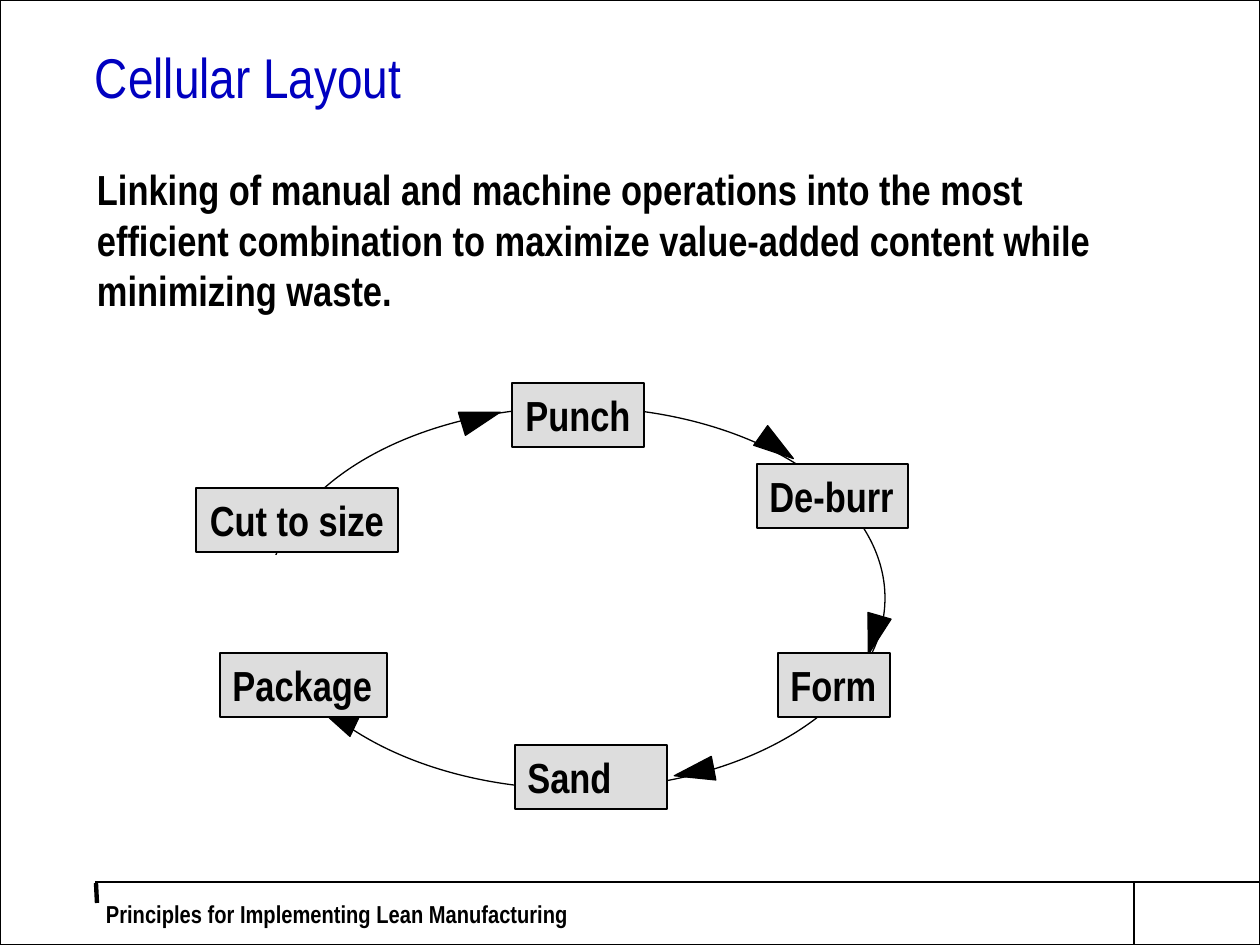
from lxml import etree
from pptx import Presentation, util as u
from pptx.dml.color import RGBColor
from pptx.enum import shapes, text
from pptx.oxml import ns

PX = 914400 / 126
BLACK = RGBColor(0, 0, 0)
WHITE = RGBColor(255, 255, 255)
GREY = RGBColor(0xDD, 0xDD, 0xDD)
BLUE = RGBColor(0, 0, 0xC0)
KIND = shapes.MSO_SHAPE

deck = Presentation()
deck.slide_width, deck.slide_height = u.Inches(10), u.Inches(7.5)
slide = deck.slides.add_slide(deck.slide_layouts[6])


def draw(kind, box, fill=None, line=BLACK):
    """Add a preset shape; box is left, top, width, height in px."""
    shape = slide.shapes.add_shape(kind, *[round(n * PX) for n in box])
    shape.shadow.inherit = False
    if fill is None:
        shape.fill.background()
    else:
        shape.fill.solid()
        shape.fill.fore_color.rgb = fill
    shape.line.color.rgb = line
    shape.line.width = u.Pt(0.75)
    return shape


def write(shape, words, size, color=BLACK, bold=True):
    frame = shape.text_frame
    frame.text = words
    frame.word_wrap = True
    font = frame.paragraphs[0].runs[0].font
    font.name, font.size, font.bold = "Arial Narrow", u.Pt(size), bold
    font.color.rgb = color
    return frame


# Page frame and footer rules
for x1, y1, x2, y2, width in [
    (1260, 882, 95, 882, 0.75),
    (1134, 882, 1134, 945, 0.75),
    (96, 883, 97, 903, 2.5),
]:
    ends = [round(n * PX) for n in (x1, y1, x2, y2)]
    rule = slide.shapes.add_connector(shapes.MSO_CONNECTOR.STRAIGHT, *ends)
    rule.line.color.rgb = BLACK
    rule.line.width = u.Pt(width)
    etree.SubElement(rule._element.spPr, ns.qn("a:effectLst"))
draw(KIND.RECTANGLE, (0, 0, 1260, 945))

# Footer, title and statement: box, side inset, top inset
for words, box, side, top, size, color, bold in [
    ("Principles for Implementing Lean Manufacturing",
     (95, 882, 607, 63), 11, 0, 14, BLACK, True),
    ("Cellular Layout", (95, 50, 913, 158), 0, 0, 32, BLUE, False),
    ("Linking of manual and machine operations into the most efficient "
     "combination to maximize value-added content while minimizing waste.",
     (84, 158, 1050, 683), 13, 6, 24, BLACK, True),
]:
    label = slide.shapes.add_textbox(*[round(n * PX) for n in box])
    frame = write(label, words, size, color, bold)
    frame.margin_left = frame.margin_right = round(side * PX)
    frame.margin_top = frame.margin_bottom = round(top * PX)
    if size == 14:
        frame.vertical_anchor = text.MSO_ANCHOR.MIDDLE
    if size == 32:
        frame.paragraphs[0].line_spacing = 0.9

# Loop with arrowheads, open on the left side
draw(KIND.OVAL, (268, 407, 617, 382))
for x, y, turn in [
    (682, 752, 259.1), (325, 697, 295.2), (469, 398, 73.1),
    (765, 427, 125.3), (862, 615, 196.1),
]:
    head = draw(KIND.ISOSCELES_TRIANGLE, (x, y, 24, 40), BLACK)
    head.rotation = turn
for gap in [(232, 615, 96, 39), (219, 556, 96, 59)]:
    draw(KIND.RECTANGLE, gap, WHITE, WHITE)

# Steps of the cell
for words, x, y, width in [
    ("Punch", 512, 383, 132),
    ("Cut to size", 196, 488, 202),
    ("De-burr", 757, 464, 151),
    ("Sand", 515, 745, 152),
    ("Form", 778, 653, 112),
    ("Package", 220, 653, 167),
]:
    step = draw(KIND.RECTANGLE, (x, y, width, 64), GREY)
    frame = write(step, words, 24)
    frame.word_wrap = words == "Sand"
    frame.auto_size = text.MSO_AUTO_SIZE.SHAPE_TO_FIT_TEXT
    frame.vertical_anchor = text.MSO_ANCHOR.MIDDLE
    mid = words in ("Punch", "Cut to size")
    frame.paragraphs[0].alignment = (
        text.PP_ALIGN.CENTER if mid else text.PP_ALIGN.LEFT)

deck.save("out.pptx")
